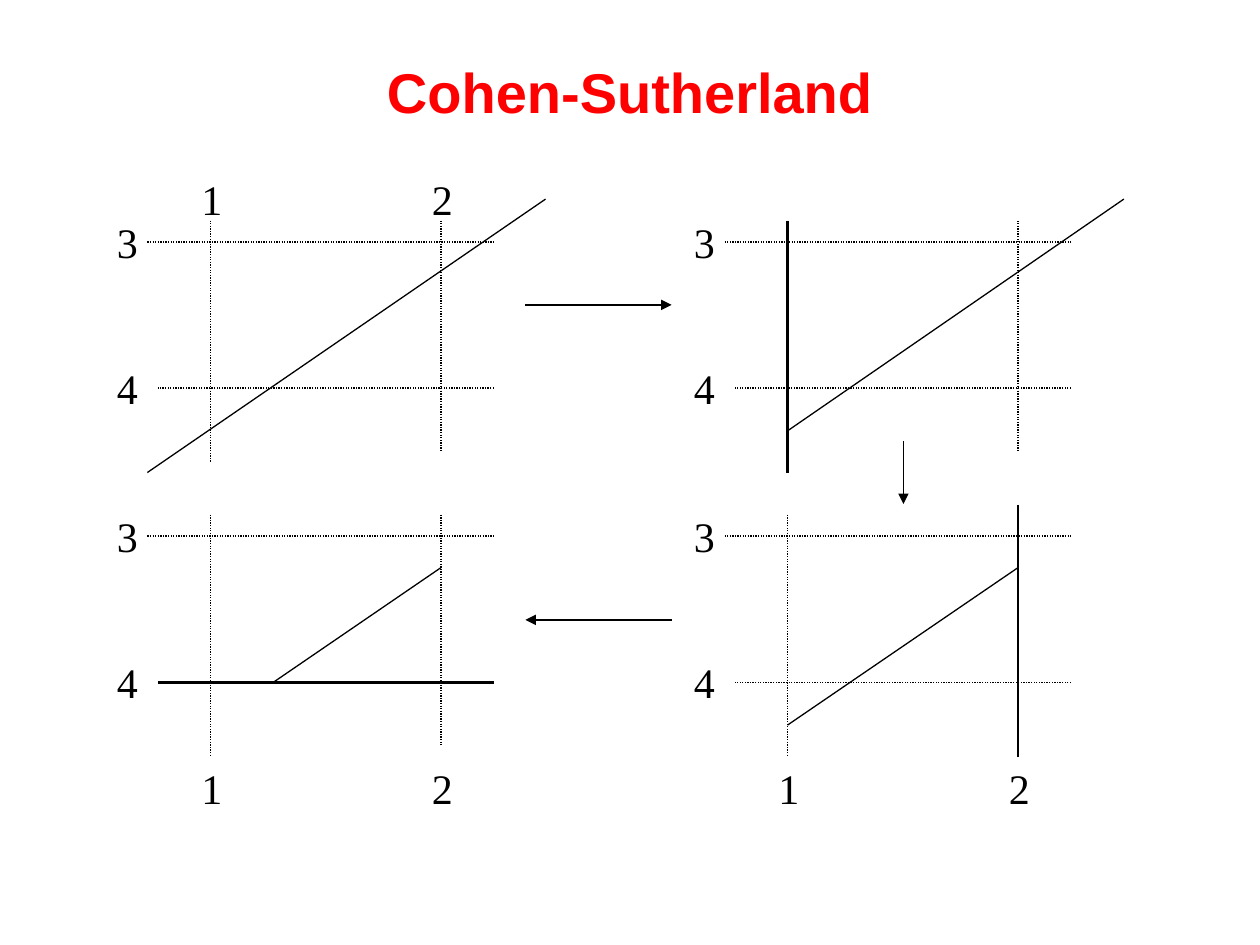
from pptx import Presentation
from pptx.dml.color import RGBColor
from pptx.enum.dml import MSO_LINE
from pptx.enum.shapes import MSO_CONNECTOR
from pptx.enum.text import MSO_ANCHOR, MSO_AUTO_SIZE, PP_ALIGN
from pptx.oxml.ns import qn
from pptx.util import Inches, Pt
from lxml.etree import SubElement

TITLE = "Cohen-Sutherland"
BLACK, RED = "000000", "FF0000"

# Window edges, segments and labels are measured from the top left panel.
COLUMNS = (0, 4.58)
ROWS = (0, 2.335)
EDGES = {
    "3": ((1.17, 1.92), (3.92, 1.92)),
    "2": ((3.5, 1.75), (3.5, 3.58)),
    "4": ((3.92, 3.08), (1.25, 3.08)),
    "1": ((1.67, 1.75), (1.67, 3.67)),
}
EDGE_LABELS_X = {"1": 1.5, "2": 3.33}
EDGE_LABELS_Y = {"3": 1.67, "4": 2.83}
LABEL_LEFT = 0.83
ABOVE, BELOW = 1.33, 3.67

STEPS = [
    {"cell": (0, 0), "segment": ((1.17, 3.75), (4.33, 1.58)),
     "clip_edge": None, "labels_top": ABOVE},
    {"cell": (1, 0), "segment": ((1.67, 3.42), (4.34, 1.58)),
     "clip_edge": ((1.67, 1.75), (1.67, 3.75)), "labels_top": None},
    {"cell": (1, 1), "segment": ((1.67, 3.42), (3.5, 2.17)),
     "clip_edge": ((3.5, 1.67), (3.5, 3.67)), "labels_top": BELOW},
    {"cell": (0, 1), "segment": ((2.17, 3.08), (3.5, 2.17)),
     "clip_edge": EDGES["4"], "labels_top": BELOW},
]
STEP_ARROWS = [
    ((4.17, 2.42), (5.33, 2.42)),
    ((7.17, 3.5), (7.17, 4)),
    ((5.33, 4.92), (4.17, 4.92)),
]

TITLE_FONT = {"name": "Arial", "size": Pt(32), "bold": True}
LABEL_FONT = {"name": "Times New Roman", "size": Pt(24)}
TITLE_FRAME = {"word_wrap": True, "vertical_anchor": MSO_ANCHOR.MIDDLE}
LABEL_FRAME = {"word_wrap": False, "auto_size": MSO_AUTO_SIZE.SHAPE_TO_FIT_TEXT}


def set_all(target, values):
    for attribute, value in values.items():
        setattr(target, attribute, value)


def rgb(color):
    return RGBColor.from_string(color)


def add_text(slide, text, box, frame_format, font_format, color, align=PP_ALIGN.LEFT):
    frame = slide.shapes.add_textbox(*map(Inches, box)).text_frame
    set_all(frame, frame_format)
    paragraph = frame.paragraphs[0]
    paragraph.alignment = align
    run = paragraph.add_run()
    run.text = text
    set_all(run.font, font_format)
    run.font.color.rgb = rgb(color)


def add_line(slide, ends, offset=(0, 0), width=0.75, dotted=False, arrow=False):
    coordinates = [Inches(value + shift) for point in ends
                   for value, shift in zip(point, offset)]
    connector = slide.shapes.add_connector(MSO_CONNECTOR.STRAIGHT, *coordinates)
    connector.line.color.rgb = rgb(BLACK)
    connector.line.width = Pt(width)
    if dotted:
        connector.line.dash_style = MSO_LINE.ROUND_DOT
    properties = connector._element.spPr
    if arrow:
        SubElement(properties.find(qn("a:ln")), qn("a:tailEnd"), type="triangle")
    SubElement(properties, qn("a:effectLst"))


def add_step(slide, cell, segment, clip_edge, labels_top):
    """Draw one clipping step: the window, its labels, the segment and the active edge."""
    dx, dy = offset = COLUMNS[cell[0]], ROWS[cell[1]]
    add_line(slide, segment, offset)
    for edge in EDGES.values():
        add_line(slide, edge, offset, dotted=True)
    labels = [(text, LABEL_LEFT, top) for text, top in EDGE_LABELS_Y.items()]
    if labels_top is not None:
        labels += [(text, left, labels_top) for text, left in EDGE_LABELS_X.items()]
    for text, left, top in labels:
        add_text(slide, text, (left + dx, top + dy, 0.37, 0.5),
                 LABEL_FRAME, LABEL_FONT, BLACK)
    if clip_edge:
        add_line(slide, clip_edge, offset, width=1.5)


def main():
    presentation = Presentation()
    presentation.slide_width, presentation.slide_height = Inches(10), Inches(7.5)
    slide = presentation.slides.add_slide(presentation.slide_layouts[6])
    add_text(slide, TITLE, (0.5, 0.3, 9, 0.85), TITLE_FRAME, TITLE_FONT, RED,
             PP_ALIGN.CENTER)
    for step in STEPS:
        add_step(slide, **step)
    for arrow in STEP_ARROWS:
        add_line(slide, arrow, arrow=True)
    presentation.save("out.pptx")


if __name__ == "__main__":
    main()
